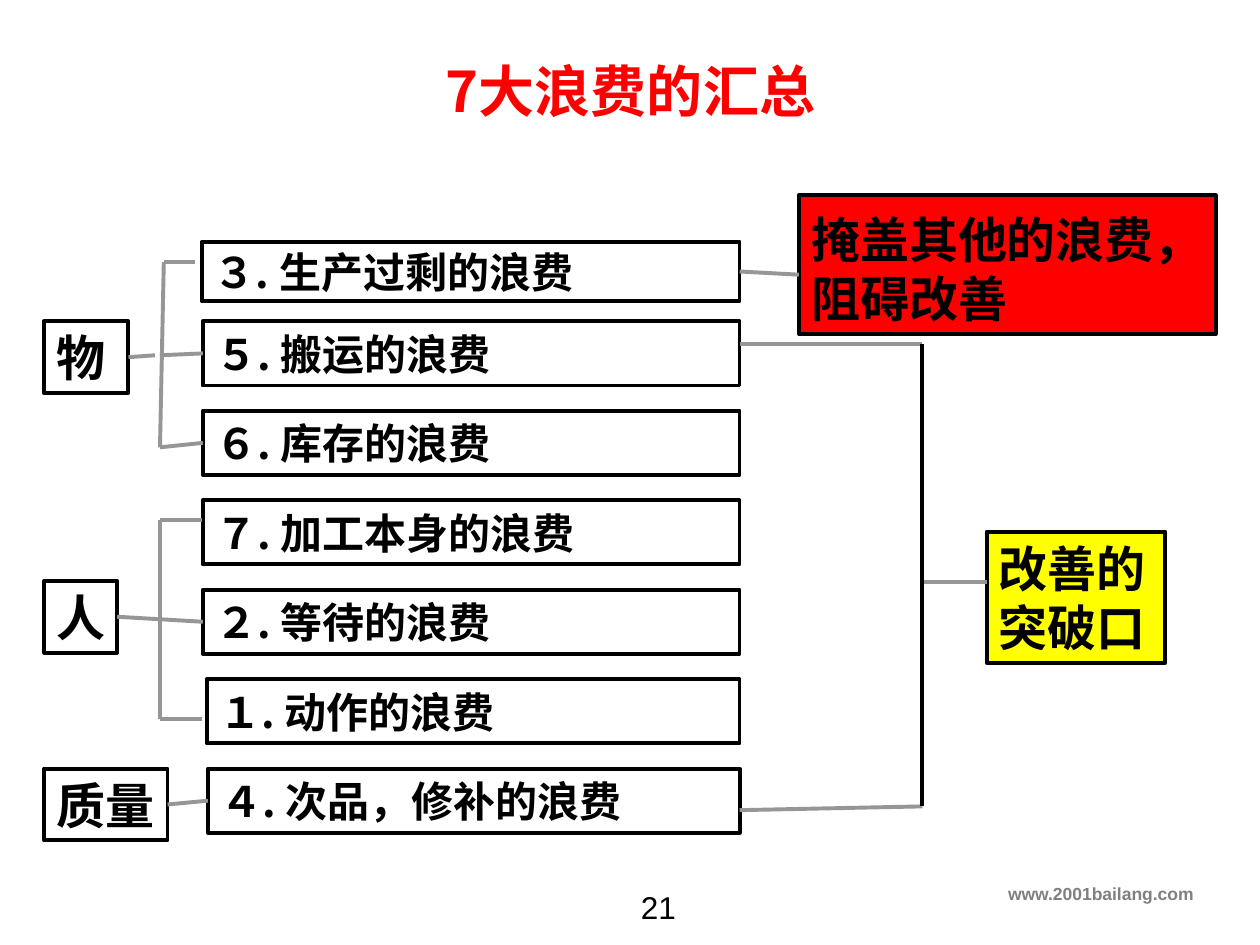
from dataclasses import dataclass

from lxml import etree
from pptx import Presentation
from pptx import util as u
from pptx.dml.color import RGBColor
from pptx.enum import shapes, text
from pptx.oxml import ns


@dataclass(frozen=True)
class Theme:
    black: str = "000000"
    red: str = "FF0000"
    yellow: str = "FFFF00"
    gray: str = "969696"
    muted: str = "808080"
    cjk: str = "Noto Sans CJK SC"
    latin: str = "Arial"
    title: int = 32
    label: int = 28
    item: int = 24
    number: int = 18
    footer: int = 10
    stroke: float = 2.25


THEME = Theme()
WIDTH, HEIGHT = 10, 7.5
GRID_TOP, ROW_STEP, ROW_HEIGHT = 1.84, 0.71, 0.51
GROUP_LEFT, GROUP_HEIGHT = 0.35, 0.57
BRACE, ITEM_LEFT, ITEM_RIGHT = 1.27, 1.61, 5.87
COLLECTOR, COLLECTOR_TOP, COLLECTOR_BOTTOM = 7.32, 2.73, 6.4
TOP, LEFT, BOTTOM, RIGHT = range(4)

WASTES = [
    ("３. 生产过剩的浪费", 1.6),
    ("５. 搬运的浪费", ITEM_LEFT),
    ("６. 库存的浪费", ITEM_LEFT),
    ("７. 加工本身的浪费", ITEM_LEFT),
    ("２. 等待的浪费", ITEM_LEFT),
    ("１. 动作的浪费", 1.64),
    ("４. 次品，修补的浪费", 1.65),
]


def row_top(row):
    return GRID_TOP + row * ROW_STEP


def inches(*lengths):
    return [u.Inches(length) for length in lengths]


def apply(target, values):
    for name, value in values.items():
        setattr(target, name, value)


def write(shape, words, size, color=THEME.black, face=THEME.cjk, bold=True,
          align=text.PP_ALIGN.LEFT, anchor=text.MSO_ANCHOR.TOP):
    frame = shape.text_frame
    apply(frame, {"word_wrap": True, "vertical_anchor": anchor})
    paragraph = frame.paragraphs[0]
    paragraph.alignment = align
    run = paragraph.add_run()
    run.text = words
    apply(run.font, {"name": face, "size": u.Pt(size), "bold": bold})
    run.font.color.rgb = RGBColor.from_string(color)
    east_asian = etree.SubElement(run.font._element, ns.qn("a:ea"))
    east_asian.set("typeface", face)


def add_box(slide, words, bounds, size, fill=None, anchor=text.MSO_ANCHOR.MIDDLE):
    box = slide.shapes.add_shape(shapes.MSO_SHAPE.RECTANGLE, *inches(*bounds))
    box.shadow.inherit = False
    if fill:
        box.fill.solid()
        box.fill.fore_color.rgb = RGBColor.from_string(fill)
    else:
        box.fill.background()
    box.line.color.rgb = RGBColor.from_string(THEME.black)
    box.line.width = u.Pt(THEME.stroke)
    write(box, words, size, anchor=anchor)
    return box


def add_caption(slide, words, bounds, size, **style):
    write(slide.shapes.add_textbox(*inches(*bounds)), words, size, **style)


def add_line(slide, start, end, color=THEME.gray, begin=None, finish=None):
    line = slide.shapes.add_connector(
        shapes.MSO_CONNECTOR.STRAIGHT, *inches(*start, *end))
    line.line.color.rgb = RGBColor.from_string(color)
    line.line.width = u.Pt(THEME.stroke)
    etree.SubElement(line._element.spPr, ns.qn("a:effectLst"))
    if begin:
        line.begin_connect(*begin)
    if finish:
        line.end_connect(*finish)


def add_wastes(slide):
    boxes = []
    for row, (words, left) in enumerate(WASTES):
        drop, height = (0.08, 0.47) if row == 0 else (0, ROW_HEIGHT)
        bounds = left, row_top(row) + drop, ITEM_RIGHT - left, height
        boxes.append(add_box(slide, words, bounds, THEME.item))
    return boxes


def add_group(slide, words, top, width):
    bounds = GROUP_LEFT, top, width, GROUP_HEIGHT
    return add_box(slide, words, bounds, THEME.label)


def add_material_brace(slide, material, wastes):
    top, middle, bottom = 2.08, 2.82, 3.55
    add_line(slide, (1.55, top), (1.3, top))
    add_line(slide, (1.3, top), (BRACE, bottom))
    for y, waste in ((middle, wastes[1]), (bottom, wastes[2])):
        add_line(slide, (BRACE, y), (ITEM_LEFT, y), finish=(waste, LEFT))
    add_line(slide, (1.02, middle), (1.23, middle), begin=(material, RIGHT))


def add_people_brace(slide, people, wastes):
    top, bottom = 4.13, 5.71
    for y in (top, bottom):
        add_line(slide, (1.6, y), (BRACE, y))
    add_line(slide, (BRACE, top), (BRACE, bottom))
    add_line(slide, (ITEM_LEFT, 4.88), (0.93, 4.85),
             begin=(wastes[4], LEFT), finish=(people, RIGHT))


def add_collector(slide):
    branch = 4.62
    add_line(slide, (ITEM_RIGHT, COLLECTOR_TOP), (COLLECTOR, COLLECTOR_TOP))
    add_line(slide, (ITEM_RIGHT, 6.43), (COLLECTOR, COLLECTOR_BOTTOM))
    add_line(slide, (COLLECTOR, branch), (7.83, branch))
    add_line(slide, (COLLECTOR, COLLECTOR_TOP), (COLLECTOR, COLLECTOR_BOTTOM),
             color=THEME.black)


def main():
    deck = Presentation()
    apply(deck, {"slide_width": u.Inches(WIDTH), "slide_height": u.Inches(HEIGHT)})
    slide = deck.slides.add_slide(deck.slide_layouts[6])

    add_caption(slide, "www.2001bailang.com", (0, 6.96, 9.57, 0.35), THEME.footer,
                color=THEME.muted, face=THEME.latin, align=text.PP_ALIGN.RIGHT)
    wastes = add_wastes(slide)
    material = add_group(slide, "物", row_top(1), 0.67)
    people = add_group(slide, "人", 4.61, 0.58)
    quality = add_group(slide, "质量", row_top(6), 0.98)

    add_material_brace(slide, material, wastes)
    add_people_brace(slide, people, wastes)
    add_line(slide, (1.33, 6.35), (1.65, 6.35),
             begin=(quality, RIGHT), finish=(wastes[6], LEFT))
    add_box(slide, "改善的突破口", (7.83, 4.22, 1.42, 1.04), THEME.label, THEME.yellow)
    add_collector(slide)
    add_box(slide, "掩盖其他的浪费，阻碍改善", (6.34, 1.55, 3.31, 1.1),
            THEME.label, THEME.red, text.MSO_ANCHOR.BOTTOM)
    add_line(slide, (ITEM_RIGHT, 2.18), (6.34, 2.18), begin=(wastes[0], RIGHT))

    add_caption(slide, "7大浪费的汇总", (3.42, 0.4, 3.17, 0.64), THEME.title,
                color=THEME.red, align=text.PP_ALIGN.CENTER)
    add_caption(slide, "21", (4.06, 7, 2.33, 0.4), THEME.number, face=THEME.latin,
                bold=False, align=text.PP_ALIGN.CENTER)
    deck.save("out.pptx")


if __name__ == "__main__":
    main()
